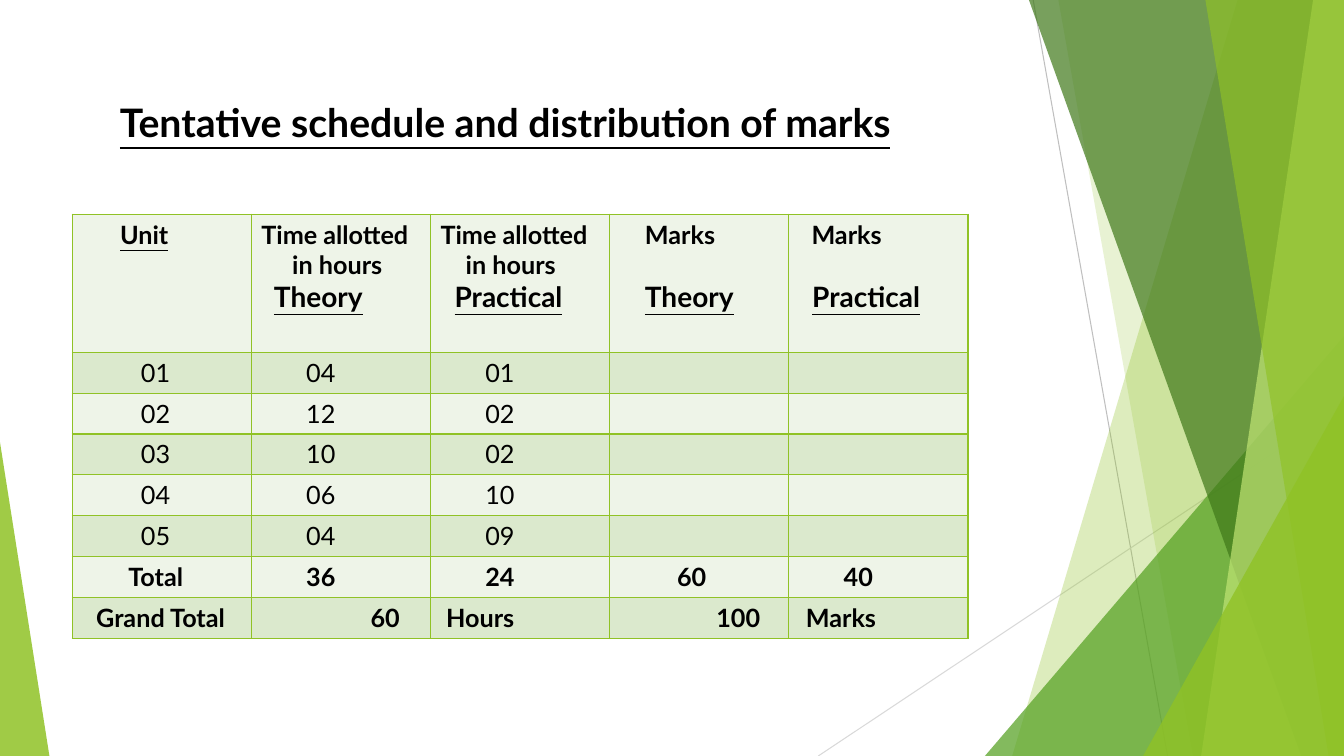
from dataclasses import dataclass

from lxml import etree
from pptx import Presentation
from pptx import util as u
from pptx.dml import color
from pptx.enum import shapes
from pptx.oxml import ns

Pt = u.Pt
WIDTH, HEIGHT = 960, 540


@dataclass(frozen=True)
class Theme:
    """Colours, font and type sizes of the slide."""
    font: str = "Lato"
    ink: str = "000000"
    lime: str = "90C226"
    green: str = "54A021"
    forest: str = "3F7819"
    pale: str = "C0E474"
    light_band: str = "EEF4E8"
    dark_band: str = "DBE9CD"
    title: int = 28
    heading: int = 20
    body: int = 18


@dataclass(frozen=True)
class Line:
    """One line of text in a table cell."""
    text: str
    indent: float = 0
    size: int = Theme.body
    bold: bool = True
    underline: bool = False
    before: float = 0


THEME = Theme()
COLUMN_WIDTH, HEADER_HEIGHT, ROW_HEIGHT = 128, 98.6, 29.2
LIGHT_RAYS = [
    ([(884, 0), (960, 0), (960, 540), (723, 540)], THEME.lime, 30),
    ([(756, 0), (960, 0), (960, 540), (852, 540)], THEME.lime, 20),
]
STRONG_RAYS = [
    ([(735, 0), (960, 0), (960, 540), (929.5, 540)], THEME.forest, 70),
    ([(938, 0), (960, 0), (960, 540), (858, 540)], THEME.pale, 70),
    ([(861, 0), (960, 0), (960, 540), (949, 540)], THEME.lime, 65),
]
HOURS = [("04", "01"), ("12", "02"), ("10", "02"), ("06", "10"), ("04", "09")]


def subheading(text, indent, before=0):
    """Return an underlined heading line."""
    return Line(text, indent, THEME.heading, underline=True, before=before)


def header_row():
    """Return the lines of the five header cells."""
    return [
        [Line("Unit", 27, underline=True)],
        [Line("Time allotted"), Line("in hours", 22), subheading("Theory", 9)],
        [Line("Time allotted"), Line("in hours", 18), subheading("Practical", 10)],
        [Line("Marks", 18), subheading("Theory", 18, 21.6)],
        [Line("Marks", 9), subheading("Practical", 9.5, 21.6)],
    ]


def schedule_rows():
    """Return the lines of every cell, row by row."""
    units = [
        [[Line(f"{number:02}", 42, bold=False)],
         [Line(theory, 32, bold=False)],
         [Line(practical, 32, bold=False)], [], []]
        for number, (theory, practical) in enumerate(HOURS, 1)
    ]
    totals = [("Total", 33), ("36", 32), ("24", 32), ("60", 41), ("40", 32)]
    grand = [("Grand Total", 10), ("60", 78), ("Hours", 4), ("100", 69), ("Marks", 5)]
    sums = [[[Line(*entry)] for entry in row] for row in (totals, grand)]
    return [header_row(), *units, *sums]


def paint(shape, fill, opacity):
    """Give a shape a translucent fill and no line or shadow."""
    shape.shadow.inherit = False
    shape.line.fill.background()
    shape.fill.solid()
    shape.fill.fore_color.rgb = color.RGBColor.from_string(fill)
    tint = shape._element.spPr.find(ns.qn("a:solidFill"))[0]
    etree.SubElement(tint, ns.qn("a:alpha"), val=str(opacity * 1000))


def add_ray(page, points, fill, opacity):
    """Draw a translucent polygon."""
    corners = [(Pt(x), Pt(y)) for x, y in points]
    builder = page.shapes.build_freeform(*corners[0], scale=1.0)
    builder.add_line_segments(corners[1:], close=True)
    paint(builder.convert_to_shape(), fill, opacity)


def add_wedge(page, left, top, width, apex, fill, opacity):
    """Draw a right triangle standing on the bottom edge."""
    wedge = page.shapes.add_shape(
        shapes.MSO_SHAPE.ISOSCELES_TRIANGLE,
        Pt(left), Pt(top), Pt(width), Pt(HEIGHT - top))
    wedge.adjustments[0] = apex
    paint(wedge, fill, opacity)


def add_hairline(page, start, end, stroke):
    """Draw a thin straight line."""
    line = page.shapes.add_connector(
        shapes.MSO_CONNECTOR.STRAIGHT, *map(Pt, (*start, *end)))
    line.line.width = Pt(0.75)
    line.line.color.rgb = color.RGBColor.from_string(stroke)
    etree.SubElement(line._element.spPr, ns.qn("a:effectLst"))


def write_line(para, line):
    """Write and format one line of text."""
    para.text = line.text
    para._p.get_or_add_pPr().set("marL", str(Pt(line.indent)))
    if line.before:
        para.space_before = Pt(line.before)
    for span in para.runs:
        span.font.name = THEME.font
        span.font.size = Pt(line.size)
        span.font.bold = line.bold
        span.font.underline = line.underline
        span.font.color.rgb = color.RGBColor.from_string(THEME.ink)


def style_cell(cell, fill):
    """Give a cell its borders and fill."""
    properties = cell._tc.get_or_add_tcPr()
    for side in "LRTB":
        border = etree.SubElement(properties, ns.qn(f"a:ln{side}"), w=str(Pt(1)))
        solid = etree.SubElement(border, ns.qn("a:solidFill"))
        etree.SubElement(solid, ns.qn("a:srgbClr"), val=THEME.lime)
    cell.fill.solid()
    cell.fill.fore_color.rgb = color.RGBColor.from_string(fill)


def add_schedule(page, left, top, rows):
    """Add the banded table of hours and marks."""
    heights = [HEADER_HEIGHT] + [ROW_HEIGHT] * (len(rows) - 1)
    columns = len(rows[0])
    table = page.shapes.add_table(
        len(rows), columns, Pt(left), Pt(top),
        Pt(COLUMN_WIDTH * columns), Pt(sum(heights))).table
    table.first_row = table.horz_banding = False
    for column in table.columns:
        column.width = Pt(COLUMN_WIDTH)
    for index, (row, height) in enumerate(zip(rows, heights)):
        table.rows[index].height = Pt(height)
        band = THEME.dark_band if index % 2 else THEME.light_band
        for cell, lines in zip(table.rows[index].cells, row):
            style_cell(cell, band)
            for number, line in enumerate(lines):
                frame = cell.text_frame
                write_line(frame.add_paragraph() if number else frame.paragraphs[0], line)


def add_title(page, text):
    """Add the underlined slide title."""
    box = page.shapes.add_textbox(Pt(78.5), Pt(67), Pt(613.5), Pt(41))
    box.text_frame.word_wrap = True
    write_line(box.text_frame.paragraphs[0], Line(text, size=THEME.title, underline=True))


def main():
    """Build the slide and save the deck."""
    deck = Presentation()
    deck.slide_width, deck.slide_height = Pt(WIDTH), Pt(HEIGHT)
    page = deck.slides.add_slide(deck.slide_layouts[6])
    add_hairline(page, (738, 0), (834, 540), "BFBFBF")
    add_hairline(page, (960, 290), (584.5, 540), "D9D9D9")
    for ray in LIGHT_RAYS:
        add_ray(page, *ray)
    add_wedge(page, 703.5, 240, 256.5, 1, THEME.green, 72)
    for ray in STRONG_RAYS:
        add_ray(page, *ray)
    add_wedge(page, 816.5, 283, 143.5, 1, THEME.lime, 80)
    add_wedge(page, 0, 316, 35.3, 0, THEME.lime, 85)
    add_schedule(page, 51.5, 153, schedule_rows())
    add_title(page, "Tentative schedule and distribution of marks")
    deck.save("out.pptx")


if __name__ == "__main__":
    main()
